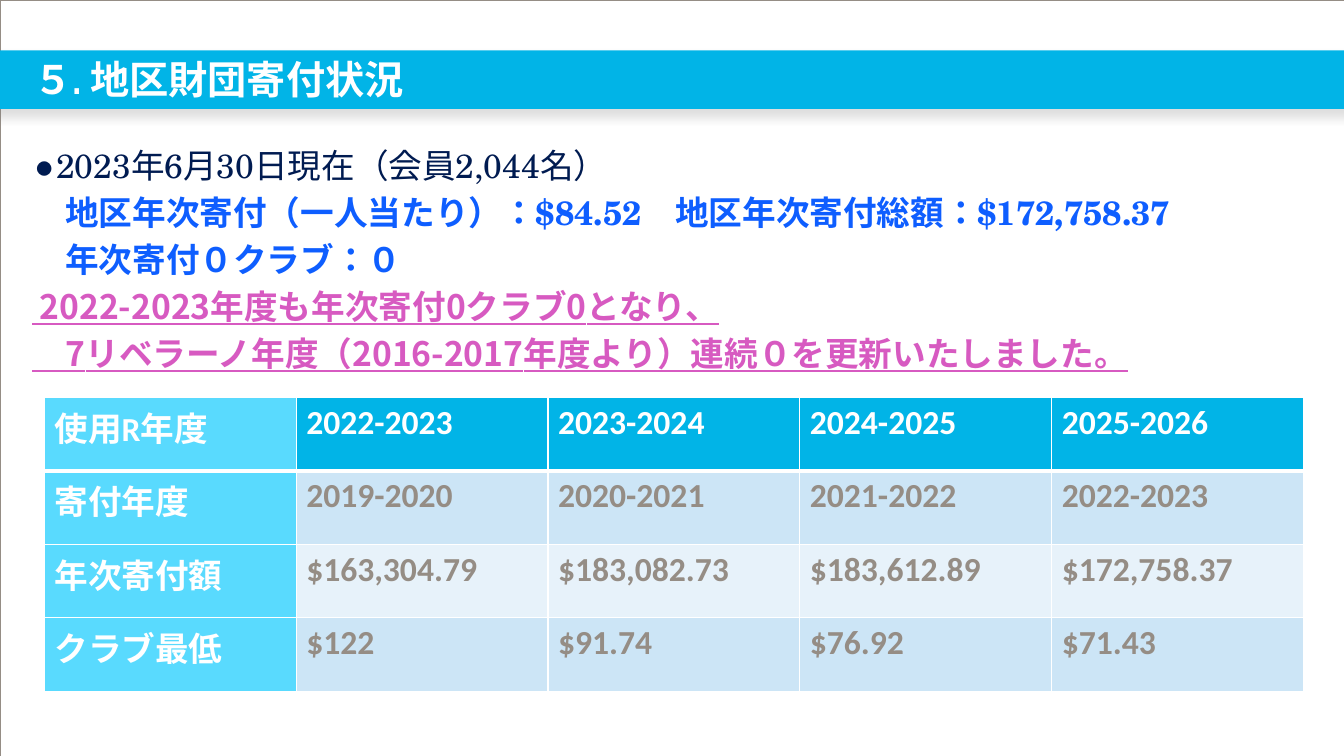
import pptx
import pptx.util
import pptx.dml.color
import pptx.enum.lang
import pptx.enum.shapes
import pptx.enum.text
import pptx.oxml
import pptx.oxml.ns
from pptx.util import Inches

TITLE = "５. 地区財団寄付状況"
SUMMARY = [
    ("●2023年6月30日現在（会員2,044名）", "navy"),
    ("地区年次寄付（一人当たり）：$84.52　地区年次寄付総額：$172,758.37", "blue"),
    ("年次寄付０クラブ：０", "blue"),
    (" 2022-2023年度も年次寄付0クラブ0となり、", "pink"),
    ("　7リベラーノ年度（2016-2017年度より）連続０を更新いたしました。", "pink"),
]
DONATIONS = [
    ["使用R年度", "2022-2023", "2023-2024", "2024-2025", "2025-2026"],
    ["寄付年度", "2019-2020", "2020-2021", "2021-2022", "2022-2023"],
    ["年次寄付額", "$163,304.79", "$183,082.73", "$183,612.89", "$172,758.37"],
    ["クラブ最低", "$122", "$91.74", "$76.92", "$71.43"],
]
COLORS = {
    "white": "FFFFFF", "gray": "958D85", "band": "01B4E7", "navy": "001B51",
    "blue": "0E5EFF", "pink": "D75AC1", "label": "59DAFE",
    "odd_row": "CCE5F6", "even_row": "E7F2FA", "shadow": "808080",
}
SERIF = "TeX Gyre Schola"
JAPANESE = "Noto Sans CJK JP"
NAMESPACE = pptx.oxml.ns.nsdecls("a")


def rgb(name):
    return pptx.dml.color.RGBColor.from_string(COLORS[name])


def write(paragraph, text, font="Calibri", size=24, color="white", bold=True, underline=False):
    run = paragraph.add_run()
    run.text = text
    run.font.name = font
    run.font.size = pptx.util.Pt(size)
    run.font.bold = bold
    run.font.underline = underline
    run.font.language_id = pptx.enum.lang.MSO_LANGUAGE_ID.JAPANESE
    run.font.color.rgb = rgb(color)
    east_asian = pptx.oxml.parse_xml(f'<a:ea {NAMESPACE} typeface="{JAPANESE}"/>')
    run.font._element.find(pptx.oxml.ns.qn("a:latin")).addnext(east_asian)


def add_rectangle(slide, left, top, width, height):
    shape = slide.shapes.add_shape(
        pptx.enum.shapes.MSO_SHAPE.RECTANGLE,
        Inches(left), Inches(top), Inches(width), Inches(height))
    shape.shadow.inherit = False
    return shape


def add_frame_and_band(slide):
    frame = add_rectangle(slide, 0, 0, 13.33, 7.5)
    frame.fill.background()
    frame.line.color.rgb = rgb("gray")
    frame.line.width = pptx.util.Pt(0.13)

    band = add_rectangle(slide, -0.11, 0.5, 13.56, 0.58)
    band.fill.solid()
    band.fill.fore_color.rgb = rgb("band")
    band.line.fill.background()
    effects = band.element.spPr.find(pptx.oxml.ns.qn("a:effectLst"))
    effects.append(pptx.oxml.parse_xml(
        f'<a:outerShdw {NAMESPACE} blurRad="{pptx.util.Pt(7)}" dist="{pptx.util.Pt(4.8)}" '
        f'dir="5400000" rotWithShape="0"><a:srgbClr val="{COLORS["shadow"]}">'
        '<a:alpha val="25000"/></a:srgbClr></a:outerShdw>'))


def place_title(slide):
    title = slide.shapes.title
    title.left, title.top = Inches(0.33), Inches(0.33)
    title.width, title.height = Inches(9.84), Inches(0.9)
    title.element.getparent().append(title.element)
    frame = title.text_frame
    frame.margin_left = frame.margin_right = frame.margin_top = frame.margin_bottom = 0
    frame.vertical_anchor = pptx.enum.text.MSO_ANCHOR.MIDDLE
    frame.paragraphs[0].alignment = pptx.enum.text.PP_ALIGN.LEFT
    write(frame.paragraphs[0], TITLE, font="Arial Narrow", size=28)


def add_summary(slide):
    box = slide.shapes.add_textbox(Inches(0.22), Inches(1.39), Inches(12.96), Inches(2.45))
    frame = box.text_frame
    frame.word_wrap = True
    for index, (text, color) in enumerate(SUMMARY):
        paragraph = frame.paragraphs[0] if index == 0 else frame.add_paragraph()
        paragraph.line_spacing = pptx.util.Pt(28.7)
        paragraph.space_before = pptx.util.Pt(4.8 if index else 0)
        if color == "blue":
            paragraph._p.get_or_add_pPr().set("marL", str(Inches(0.33)))
        pink = color == "pink"
        write(paragraph, text, font=JAPANESE if pink else SERIF, color=color,
              bold=color != "navy", underline=pink)


def set_borders(cell, row):
    widths = {"L": 1, "R": 1, "T": 3 if row == 1 else 1, "B": 3 if row == 0 else 1}
    properties = cell._tc.get_or_add_tcPr()
    for index, (side, width) in enumerate(widths.items()):
        properties.insert(index, pptx.oxml.parse_xml(
            f'<a:ln{side} {NAMESPACE} w="{pptx.util.Pt(width)}"><a:solidFill>'
            f'<a:srgbClr val="{COLORS["white"]}"/></a:solidFill></a:ln{side}>'))


def add_donations(slide):
    table = slide.shapes.add_table(
        len(DONATIONS), len(DONATIONS[0]),
        Inches(0.44), Inches(3.94), Inches(12.49), Inches(2.92)).table
    table.horz_banding = False
    for row, values in enumerate(DONATIONS):
        for column, value in enumerate(values):
            cell = table.cell(row, column)
            if column == 0:
                fill = "label"
            elif row == 0:
                fill = "band"
            else:
                fill = "odd_row" if row % 2 else "even_row"
            cell.fill.solid()
            cell.fill.fore_color.rgb = rgb(fill)
            set_borders(cell, row)
            write(cell.text_frame.paragraphs[0], value,
                  color="gray" if row and column else "white")


def main():
    presentation = pptx.Presentation()
    presentation.slide_width = Inches(13.33)
    presentation.slide_height = Inches(7.5)
    slide = presentation.slides.add_slide(presentation.slide_layouts[5])
    add_frame_and_band(slide)
    place_title(slide)
    add_summary(slide)
    add_donations(slide)
    presentation.save("out.pptx")


if __name__ == "__main__":
    main()
